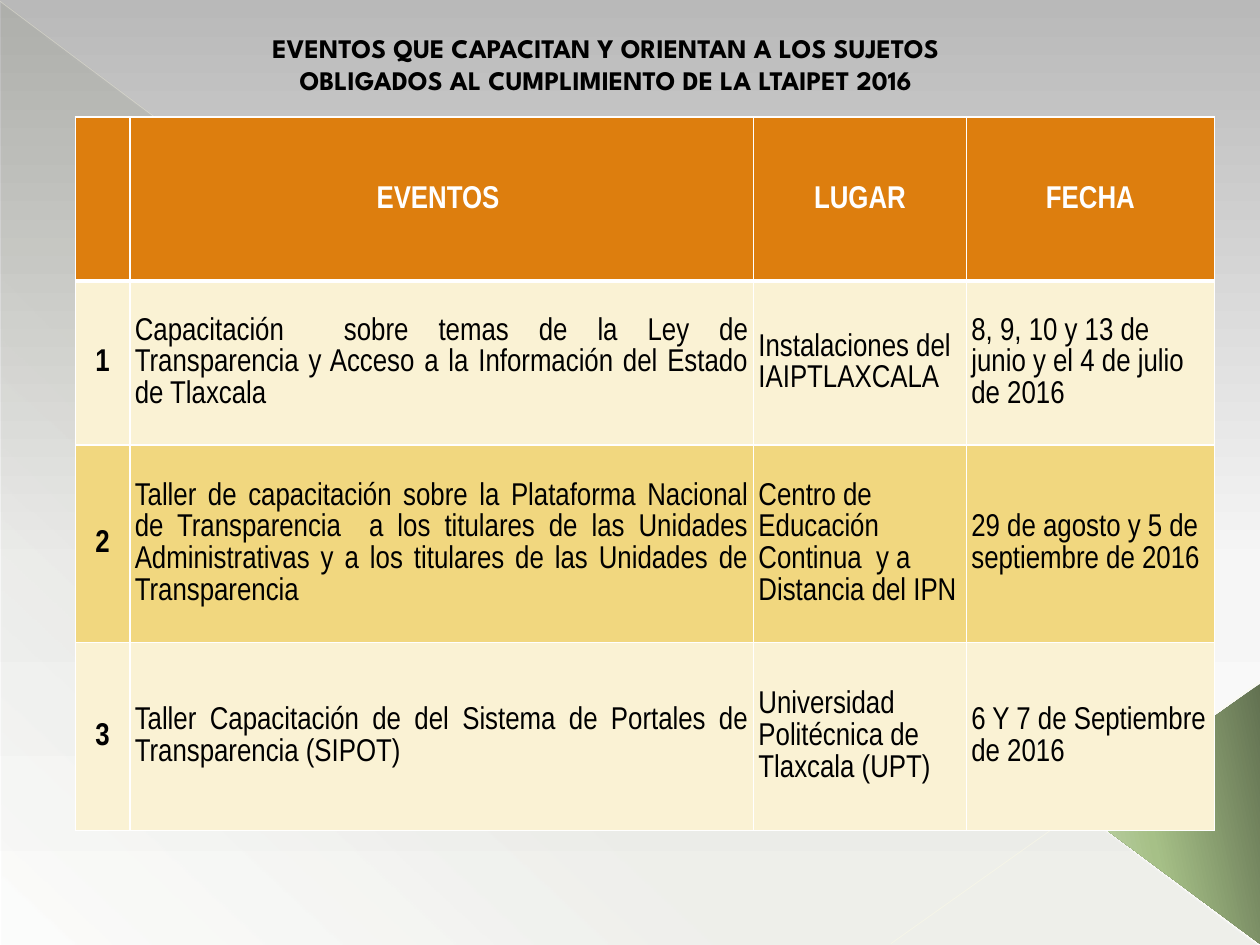
import pptx
import pptx.util
import pptx.dml.color
import pptx.enum.shapes
import pptx.enum.text
import pptx.oxml
import pptx.oxml.ns
from lxml import etree

Inches = pptx.util.Inches
Pt = pptx.util.Pt
RGB = pptx.dml.color.RGBColor.from_string
qn = pptx.oxml.ns.qn
SHAPE = pptx.enum.shapes.MSO_SHAPE
ANCHOR = pptx.enum.text.MSO_ANCHOR
ALIGN = pptx.enum.text.PP_ALIGN

COLORS = {
    "header": "DD7E0E",
    "light": "FAF2D4",
    "dark": "F1D77F",
    "white": "FFFFFF",
    "black": "000000",
    "olive": "444D26",
}


def add_color(parent, color, alpha=100):
    clr = etree.SubElement(parent, qn("a:srgbClr"), val=color)
    if alpha < 100:
        etree.SubElement(clr, qn("a:alpha"), val=str(alpha * 1000))


def set_gradient(fill, element, angle, stops):
    fill.gradient()
    grad = element.find(".//" + qn("a:gradFill"))
    gs_lst = grad.find(qn("a:gsLst"))
    for gs in list(gs_lst):
        gs_lst.remove(gs)
    for pos, *color in stops:
        add_color(etree.SubElement(gs_lst, qn("a:gs"), pos=str(pos * 1000)), *color)
    grad.find(qn("a:lin")).set("ang", str(angle * 60000))


prs = pptx.Presentation()
prs.slide_width = Inches(10)
prs.slide_height = Inches(7.5)
s = prs.slides.add_slide(prs.slide_layouts[6])
set_gradient(s.background.fill, s.element, 90,
             [(0, "B9B9B9"), (60, "F6F6F6"), (100, "FFFFFF")])

sp = s.shapes.add_shape(SHAPE.RIGHT_TRIANGLE, Inches(0.01), Inches(0.02), Inches(9.98), Inches(7.48))
sp.shadow.inherit = False
sp.line.fill.background()
set_gradient(sp.fill, sp.element, 133,
             [(0, COLORS["olive"], 10), (70, COLORS["olive"], 8), (100, COLORS["olive"], 1)])

for x1, y1, x2, y2, color, width, alpha in [
    (0, 0.01, 9.99, 7.49, "FFFDE3", 0.39, 35),
    (10, 5.41, 7.07, 7.49, "FFFDE6", 0.47, 45),
]:
    ln = s.shapes.add_connector(pptx.enum.shapes.MSO_CONNECTOR.STRAIGHT,
                                Inches(x1), Inches(y1), Inches(x2), Inches(y2))
    ln.line.width = Pt(width)
    ln.line.color.rgb = RGB(color)
    clr = ln.element.spPr.find(".//" + qn("a:srgbClr"))
    etree.SubElement(clr, qn("a:alpha"), val=str(alpha * 1000))
    etree.SubElement(ln.element.spPr, qn("a:effectLst"))

sp = s.shapes.add_shape(SHAPE.ISOSCELES_TRIANGLE, Inches(8.26), Inches(5.75), Inches(2.07), Inches(1.42))
sp.adjustments[0] = 0.51
sp.rotation = 270
sp.shadow.inherit = False
sp.line.fill.background()
set_gradient(sp.fill, sp.element, 258,
             [(0, "627151"), (60, "A6C087"), (100, "C6D8B2")])

rows = [
    ("", "EVENTOS ", "LUGAR", "FECHA"),
    ("1", "Capacitación  sobre temas de la Ley de Transparencia y Acceso a la Información del Estado de Tlaxcala",
     "Instalaciones del IAIPTLAXCALA", "8, 9, 10 y 13 de junio y el 4 de julio de 2016"),
    ("2", "Taller de capacitación sobre la Plataforma Nacional de Transparencia  a los titulares de las "
     "Unidades Administrativas y a los titulares de las Unidades de Transparencia ",
     "Centro de Educación Continua  y a Distancia del IPN", "29 de agosto y 5 de septiembre de 2016"),
    ("3", "Taller Capacitación de del Sistema de Portales de Transparencia (SIPOT)",
     "Universidad Politécnica de Tlaxcala (UPT)", "6 Y 7 de Septiembre de 2016"),
]
aligns = [ALIGN.CENTER, ALIGN.JUSTIFY, ALIGN.LEFT, ALIGN.LEFT]
fills = ["header", "light", "dark", "light"]

table = s.shapes.add_table(4, 4, Inches(0.6), Inches(0.93), Inches(9.04), Inches(5.65)).table
for col, width in zip(table.columns, [0.43, 4.95, 1.69, 1.97]):
    col.width = Inches(width)
for row, height in zip(table.rows, [1.3, 1.3, 1.57, 1.49]):
    row.height = Inches(height)

for i, texts in enumerate(rows):
    for j, text in enumerate(texts):
        cell = table.cell(i, j)
        cell.margin_left = cell.margin_right = Inches(0.04)
        cell.margin_top = cell.margin_bottom = 0
        cell.vertical_anchor = ANCHOR.MIDDLE
        tcPr = cell._tc.get_or_add_tcPr()
        for side in "LRTB":
            thick = (i, side) in [(0, "B"), (1, "T")]
            border = etree.SubElement(tcPr, qn("a:ln" + side), w=str(Pt(3 if thick else 1)))
            add_color(etree.SubElement(border, qn("a:solidFill")), COLORS["white"])
        cell.fill.solid()
        cell.fill.fore_color.rgb = RGB(COLORS[fills[i]])
        p = cell.text_frame.paragraphs[0]
        p.text = text
        p.alignment = ALIGN.CENTER if i == 0 else aligns[j]
        p.line_spacing = 1.07
        for r in p.runs:
            r.font.name = "Arial Narrow"
            r.font.size = Pt(18)
            r.font.bold = i == 0 or j == 0
            r.font.color.rgb = RGB(COLORS["white" if i == 0 else "black"])

title = s.shapes.add_textbox(Inches(1.94), Inches(0.27), Inches(5.74), Inches(0.54))
tf = title.text_frame
tf.word_wrap = True
tf.vertical_anchor = ANCHOR.BOTTOM
tf.text = "EVENTOS QUE CAPACITAN Y ORIENTAN A LOS SUJETOS OBLIGADOS AL CUMPLIMIENTO DE LA LTAIPET 2016"
p = tf.paragraphs[0]
p.alignment = ALIGN.CENTER
r = p.runs[0]
r.font.name = "League Spartan"
r.font.size = Pt(15.3)
r.font.bold = True
r.font.color.rgb = RGB(COLORS["black"])

prs.save("out.pptx")
